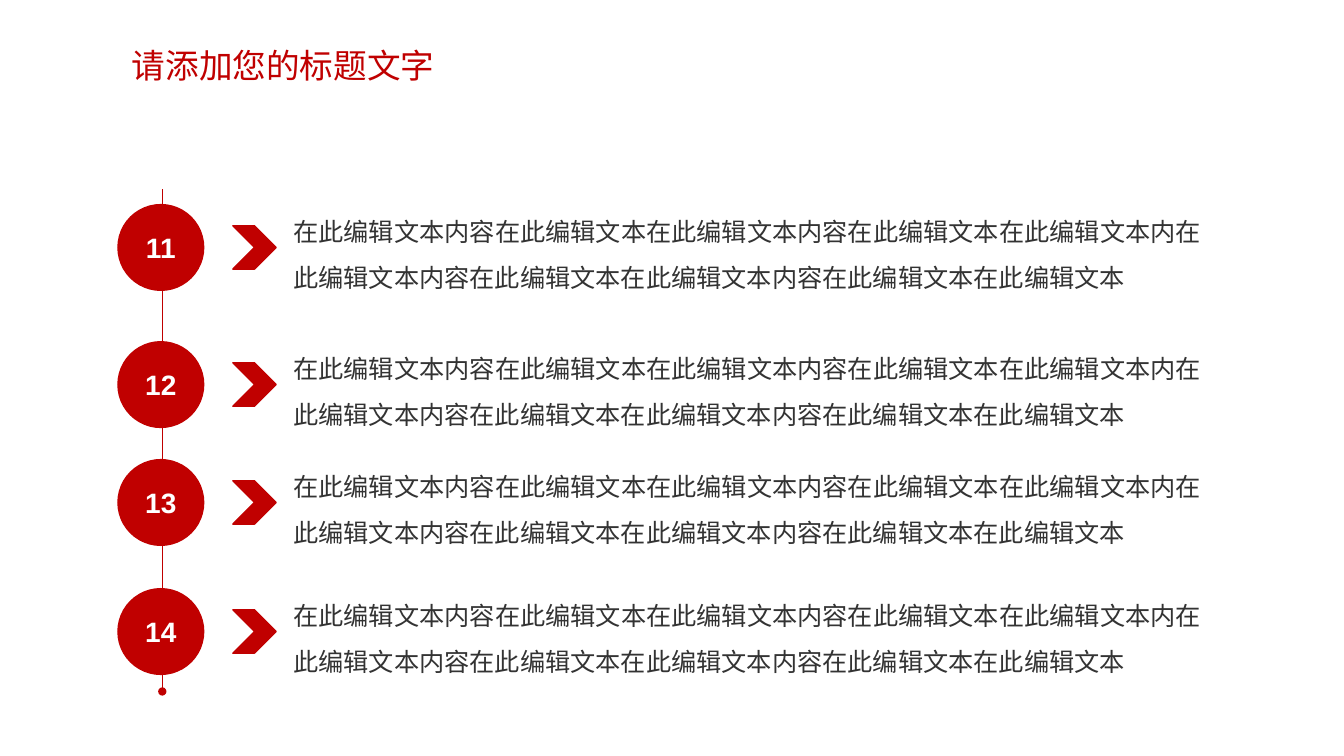
from lxml import etree
from pptx import Presentation
from pptx.dml.color import RGBColor
from pptx.enum.shapes import MSO_CONNECTOR, MSO_SHAPE
from pptx.enum.text import MSO_ANCHOR, MSO_AUTO_SIZE, PP_ALIGN
from pptx.oxml.ns import qn
from pptx.util import Inches, Pt

TITLE = "请添加您的标题文字"
BODY = (
    "在此编辑文本内容在此编辑文本在此编辑文本内容在此编辑文本在此编辑文本内"
    "在此编辑文本内容在此编辑文本在此编辑文本内容在此编辑文本在此编辑文本"
)
# Number, text, top of the circle in inches
STEPS = [
    ("11", BODY, 2.03),
    ("12", BODY, 3.39),
    ("13", BODY, 4.56),
    ("14", BODY, 5.84),
]

RED = RGBColor(0xC0, 0x00, 0x00)
WHITE = RGBColor(0xFF, 0xFF, 0xFF)
DARK_GRAY = RGBColor(0x33, 0x33, 0x33)
FONT = "Arial"

ROUNDED = MSO_SHAPE.ROUNDED_RECTANGLE
CHEVRON = MSO_SHAPE.CHEVRON
STRAIGHT = MSO_CONNECTOR.STRAIGHT
MIDDLE = MSO_ANCHOR.MIDDLE
FIT_SHAPE = MSO_AUTO_SIZE.SHAPE_TO_FIT_TEXT
LEFT, CENTER, JUSTIFY = PP_ALIGN.LEFT, PP_ALIGN.CENTER, PP_ALIGN.JUSTIFY

CIRCLE_LEFT, CIRCLE_SIZE = 1.17, 0.85
CHEVRON_LEFT, CHEVRON_SIZE = 2.31, 0.43
BODY_LEFT, BODY_WIDTH, BODY_HEIGHT = 2.81, 9.2, 1.01
TIMELINE_X, TIMELINE_TOP, TIMELINE_BOTTOM = 1.61, 1.88, 6.86


def write(frame, text, size, color, alignment, bold=False):
    paragraph = frame.paragraphs[0]
    paragraph.alignment = alignment
    run = paragraph.add_run()
    run.text = text
    run.font.name = FONT
    run.font.size = Pt(size)
    run.font.bold = bold
    run.font.color.rgb = color
    return paragraph


def add_text(slide, left, top, width, height, text, size, color, alignment):
    box = slide.shapes.add_textbox(
        Inches(left), Inches(top), Inches(width), Inches(height))
    box.text_frame.word_wrap = True
    box.text_frame.auto_size = FIT_SHAPE
    return write(box.text_frame, text, size, color, alignment)


def add_red_shape(slide, kind, left, top, size):
    shape = slide.shapes.add_shape(
        kind, Inches(left), Inches(top), Inches(size), Inches(size))
    shape.shadow.inherit = False
    shape.fill.solid()
    shape.fill.fore_color.rgb = RED
    shape.line.color.rgb = RED
    shape.line.width = Pt(1)
    return shape


def add_timeline(slide):
    """Draw the vertical line with a dot at its lower end."""
    line = slide.shapes.add_connector(
        STRAIGHT, Inches(TIMELINE_X), Inches(TIMELINE_TOP),
        Inches(TIMELINE_X), Inches(TIMELINE_BOTTOM))
    line.line.color.rgb = RED
    line.line.width = Pt(0.5)
    etree.SubElement(line.line._get_or_add_ln(), qn("a:tailEnd"), type="oval")
    etree.SubElement(line._element.spPr, qn("a:effectLst"))


def add_step(slide, number, text, top):
    circle = add_red_shape(slide, ROUNDED, CIRCLE_LEFT, top, CIRCLE_SIZE)
    circle.adjustments[0] = 0.5
    circle.text_frame.vertical_anchor = MIDDLE
    write(circle.text_frame, number, 20, WHITE, CENTER, bold=True)

    chevron_top = top + (CIRCLE_SIZE - CHEVRON_SIZE) / 2
    add_red_shape(slide, CHEVRON, CHEVRON_LEFT, chevron_top, CHEVRON_SIZE)

    body_top = top + (CIRCLE_SIZE - BODY_HEIGHT) / 2
    paragraph = add_text(slide, BODY_LEFT, body_top, BODY_WIDTH, BODY_HEIGHT,
                         text, 18, DARK_GRAY, JUSTIFY)
    paragraph.line_spacing = 1.5


def main():
    presentation = Presentation()
    presentation.slide_width = Inches(13.33)
    presentation.slide_height = Inches(7.5)
    slide = presentation.slides.add_slide(presentation.slide_layouts[6])
    add_timeline(slide)
    for number, text, top in STEPS:
        add_step(slide, number, text, top)
    add_text(slide, 1.21, 0.4, 6.21, 0.5, TITLE, 24, RED, LEFT)
    presentation.save("out.pptx")


if __name__ == "__main__":
    main()
